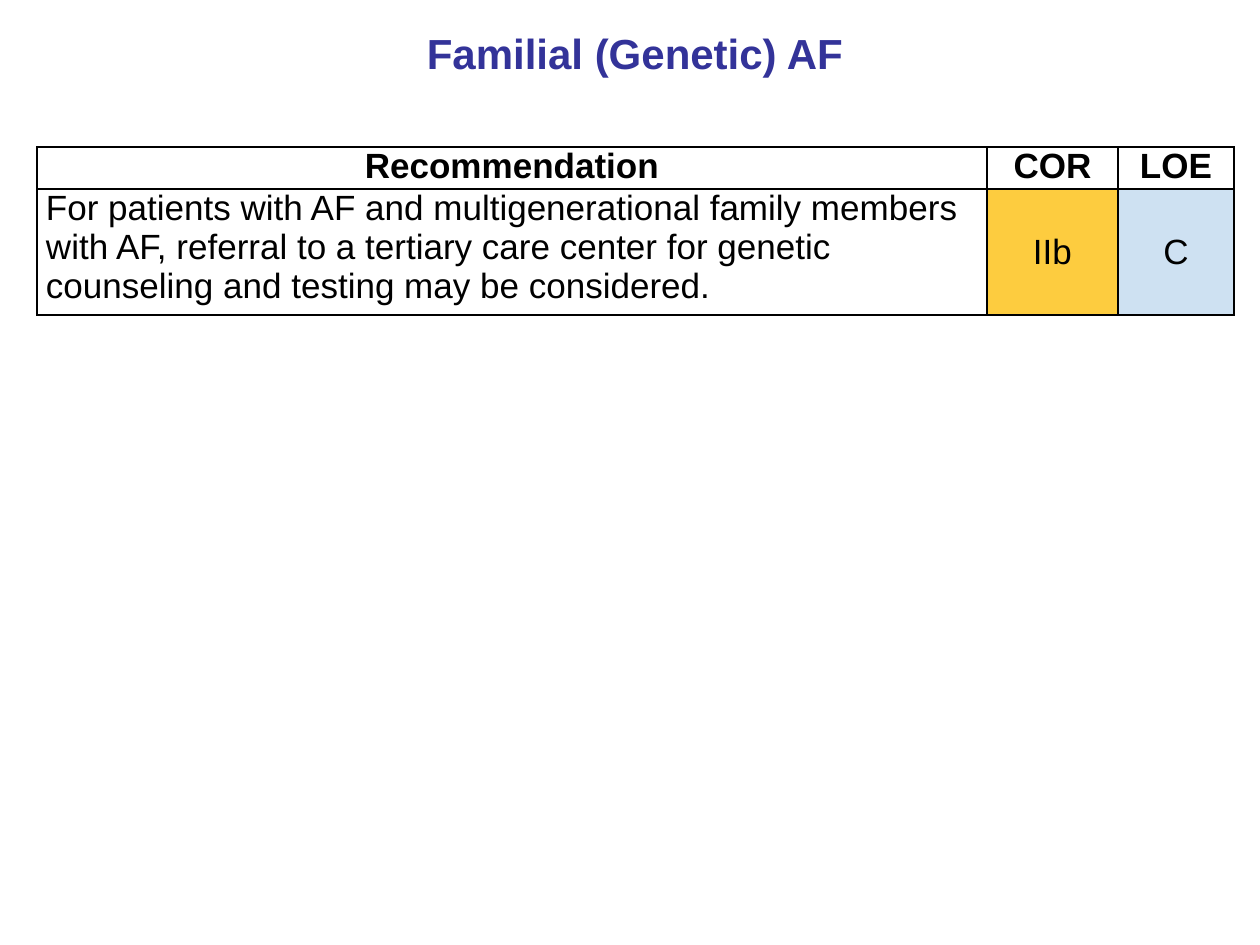
from pptx import Presentation
from pptx import util as u
from pptx.dml.color import RGBColor
from pptx.enum import text
from pptx.oxml import parse_xml
from pptx.oxml.ns import nsdecls

PX = u.Inches(1) // 126
COLORS = {"title": "333399", "ink": "000000", "paper": "FFFFFF",
          "cor": "FDCC3F", "loe": "CEE1F2"}
CENTER, LEFT = text.PP_ALIGN.CENTER, text.PP_ALIGN.LEFT

HEADINGS = ["Recommendation", "COR", "LOE"]
RECOMMENDATION = [
    "For patients with AF and multigenerational family members with AF, "
    "referral to a tertiary care center for genetic counseling and testing "
    "may be considered.",
    "IIb", "C"]
COLUMN_WIDTHS = [950, 131, 116]
ROW_HEIGHTS = [42, 126]


def rgb(name):
    return RGBColor.from_string(COLORS[name])


def style(paragraph, size, color, bold, align):
    paragraph.alignment = align
    font = paragraph.font
    font.name, font.size, font.bold = "Arial", u.Pt(size), bold
    font.color.rgb = rgb(color)


def add_title(slide, left, top, width, height):
    frame = slide.shapes.add_textbox(
        left * PX, top * PX, width * PX, height * PX).text_frame
    frame.word_wrap = True
    frame.auto_size = text.MSO_AUTO_SIZE.SHAPE_TO_FIT_TEXT
    heading = frame.paragraphs[0]
    heading.text = "Familial (Genetic) AF"
    style(heading, 24, "title", True, CENTER)


def add_borders(cell):
    # Borders come before the fill in the cell properties
    properties = cell._tc.get_or_add_tcPr()
    for position, side in enumerate(["lnL", "lnR", "lnT", "lnB"]):
        properties.insert(position, parse_xml(
            f'<a:{side} {nsdecls("a")} w="{u.Pt(1)}"><a:solidFill>'
            f'<a:srgbClr val="{COLORS["ink"]}"/></a:solidFill></a:{side}>'))


def fill_cell(cell, wording, fill, bold, align, anchor):
    cell.margin_left = cell.margin_right = 9 * PX
    cell.margin_top = cell.margin_bottom = 0
    cell.vertical_anchor = anchor
    cell.fill.solid()
    cell.fill.fore_color.rgb = rgb(fill)
    add_borders(cell)
    cell.text = wording
    style(cell.text_frame.paragraphs[0], 20, "ink", bold, align)


def add_recommendations(slide, left, top):
    table = slide.shapes.add_table(
        2, 3, left * PX, top * PX,
        sum(COLUMN_WIDTHS) * PX, sum(ROW_HEIGHTS) * PX).table
    table.first_row = table.horz_banding = False
    for column, width in zip(table.columns, COLUMN_WIDTHS):
        column.width = width * PX
    for row, height in zip(table.rows, ROW_HEIGHTS):
        row.height = height * PX

    # Header row
    for cell, heading in zip(table.rows[0].cells, HEADINGS):
        fill_cell(cell, heading, "paper", True, CENTER, text.MSO_ANCHOR.TOP)

    # Recommendation with its class and level of evidence
    fills = ["paper", "cor", "loe"]
    aligns = [LEFT, CENTER, CENTER]
    anchors = [text.MSO_ANCHOR.TOP] + [text.MSO_ANCHOR.MIDDLE] * 2
    for cell, wording, fill, align, anchor in zip(
            table.rows[1].cells, RECOMMENDATION, fills, aligns, anchors):
        fill_cell(cell, wording, fill, False, align, anchor)


def main():
    deck = Presentation()
    deck.slide_width, deck.slide_height = 1260 * PX, 945 * PX
    slide = deck.slides.add_slide(deck.slide_layouts[6])
    add_title(slide, 136, 21, 998, 64)
    add_recommendations(slide, 37, 147)
    deck.save("out.pptx")


if __name__ == "__main__":
    main()
